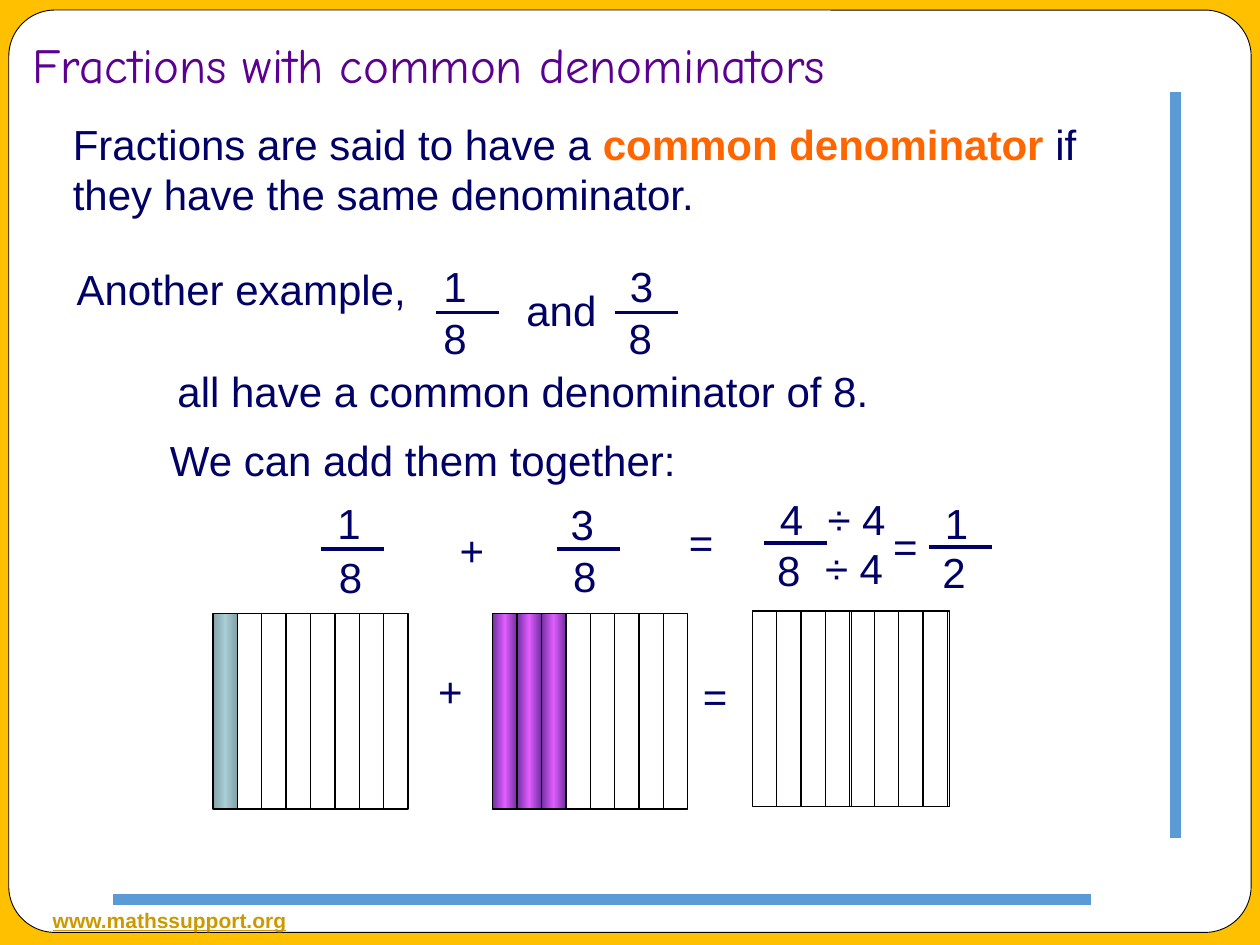
from copy import deepcopy
from dataclasses import dataclass

from lxml.etree import SubElement
from pptx import Presentation
from pptx.dml.color import RGBColor
from pptx.enum.shapes import MSO_CONNECTOR, MSO_SHAPE
from pptx.enum.text import MSO_ANCHOR, MSO_AUTO_SIZE
from pptx.oxml.ns import qn
from pptx.util import Inches, Pt


@dataclass(frozen=True)
class Theme:
    frame: str = "FFC000"
    paper: str = "FFFFFF"
    outline: str = "000000"
    rule: str = "5B9BD5"
    title: str = "5B0091"
    ink: str = "010066"
    accent: str = "FF6600"
    link: str = "CC9900"
    teal: tuple = ("83A0A6", "A8CED6")
    purple: tuple = ("7030A0", "E05DFF")
    font: str = "Arial"
    title_font: str = "Comic Neue"
    title_size: int = 28
    body_size: int = 24
    link_size: int = 12


THEME = Theme()
PARTS = 8          # equal strips in each fraction square
SQUARE = 1.55      # side of a fraction square
DIGIT = (0.39, 0.51)


# Basic parts
def add_text(slide, box, runs, wrap=False, grow=True, anchor=MSO_ANCHOR.TOP):
    """Write one paragraph; runs is a string or a list of (text, format)."""
    frame = slide.shapes.add_textbox(*map(Inches, box)).text_frame
    layout = {
        "word_wrap": wrap,
        "auto_size": MSO_AUTO_SIZE.SHAPE_TO_FIT_TEXT if grow else MSO_AUTO_SIZE.NONE,
        "vertical_anchor": anchor,
    }
    for name, value in layout.items():
        setattr(frame, name, value)
    for words, changes in [(runs, {})] if isinstance(runs, str) else runs:
        run = frame.paragraphs[0].add_run()
        run.text = words
        style = {"name": THEME.font, "size": THEME.body_size, "color": THEME.ink,
                 "bold": False} | changes
        run.font.color.rgb = RGBColor.from_string(style.pop("color"))
        style["size"] = Pt(style["size"])
        for name, value in style.items():
            setattr(run.font, name, value)
    return frame


def add_line(slide, start, end, color, width):
    line = slide.shapes.add_connector(
        MSO_CONNECTOR.STRAIGHT, *map(Inches, (*start, *end)))
    line.line.color.rgb = RGBColor.from_string(color)
    line.line.width = Pt(width)
    SubElement(line._element.spPr, qn("a:effectLst"))


def add_block(slide, box, fill=None, line_width=0.75, kind=MSO_SHAPE.RECTANGLE):
    """Draw a block; fill is None, a colour or an (edge, middle) pair."""
    block = slide.shapes.add_shape(kind, *map(Inches, box))
    block.shadow.inherit = False
    if fill is None:
        block.fill.background()
    elif isinstance(fill, tuple):
        shade_across(block.fill, *fill)
    else:
        block.fill.solid()
        block.fill.fore_color.rgb = RGBColor.from_string(fill)
    if line_width:
        block.line.color.rgb = RGBColor.from_string(THEME.outline)
        block.line.width = Pt(line_width)
    else:
        block.line.fill.background()
    return block


def shade_across(fill, edge, middle):
    fill.gradient()
    fill.gradient_angle = 0
    stop_list = fill._xPr.find(qn("a:gradFill")).find(qn("a:gsLst"))
    stop_list.append(deepcopy(stop_list[-1]))
    for stop, color, place in zip(fill.gradient_stops, (edge, middle, edge), (0, 0.5, 1)):
        stop.color.rgb = RGBColor.from_string(color)
        stop.position = place


# Fractions and their squares
def add_fraction(slide, left, bar_y, top_digit, bottom_digit, top_shift, bottom_shift):
    """Stack two digits round a bar; shifts are offsets from the bar's left end."""
    for digit, (dx, dy) in ((top_digit, top_shift), (bottom_digit, bottom_shift)):
        add_text(slide, (left + dx, bar_y + dy, *DIGIT), digit)
    add_line(slide, (left, bar_y), (left + 0.5, bar_y), THEME.ink, 2.25)


def add_square(slide, left, top, shaded=0, shade=None):
    strip = SQUARE / PARTS
    for index in range(PARTS):
        add_block(slide, (left + index * strip, top, strip, SQUARE),
                  shade if index < shaded else None)


# Regions
def build_frame(slide, left, top, width, height):
    add_block(slide, (left, top, width, height), THEME.frame, line_width=0)
    card = add_block(slide, (left + 0.07, top + 0.08, width - 0.14, height - 0.18),
                     THEME.paper, 0.5, MSO_SHAPE.ROUNDED_RECTANGLE)
    card.adjustments[0] = 0.05
    add_text(slide, (left + 0.32, top + 7.15, 2.09, 0.3), [
        ("www.mathssupport.org", {"size": THEME.link_size, "color": THEME.link,
                                  "bold": True, "underline": True})])
    add_line(slide, (left + 8.66, top + 7.14), (left + 0.9, top + 7.14), THEME.rule, 6.5)
    add_line(slide, (left + 9.33, top + 0.73), (left + 9.33, top + 6.65), THEME.rule, 6.5)


def build_title(slide, left, top, width, height):
    frame = add_text(slide, (left, top, width, height), [
        ("Fractions with common denominators",
         {"name": THEME.title_font, "size": THEME.title_size, "color": THEME.title})],
        wrap=True, grow=False, anchor=MSO_ANCHOR.BOTTOM)
    frame.margin_bottom = Inches(0.1)


def build_definition(slide, left, top, width):
    add_text(slide, (left, top, width, 0.9), [
        ("Fractions are said to have a ", {}),
        ("common denominator", {"color": THEME.accent, "bold": True}),
        (" if they have the same denominator.", {})], wrap=True)


def build_example(slide, left, top):
    add_text(slide, (left, top + 0.02, 2.93, 0.5), "Another example,")
    add_fraction(slide, left + 2.95, top + 0.46, "1", "8", (-0.04, -0.46), (-0.04, -0.05))
    add_text(slide, (left + 3.57, top + 0.19, 0.76, 0.5), "and")
    add_fraction(slide, left + 4.37, top + 0.46, "3", "8", (0.02, -0.46), (0.01, -0.05))
    add_text(slide, (left + 0.8, top + 0.83, 5.88, 0.5),
             "all have a common denominator of 8.")
    add_text(slide, (left + 0.74, top + 1.38, 4.22, 0.5), "We can add them together:")


def build_sum(slide, left, top):
    fractions = (
        (0, 0.49, "1", "8", (0.03, -0.46), (0.04, -0.03)),
        (1.87, 0.49, "3", "8", (0.01, -0.45), (0.03, -0.04)),
        (3.51, 0.44, "4", "8", (0.03, -0.44), (0.01, -0.04)),
        (4.82, 0.47, "1", "2", (0.03, -0.44), (0.01, -0.05)),
    )
    for dx, dy, *digits in fractions:
        add_fraction(slide, left + dx, top + dy, *digits)
    for sign, dx, dy in (("+", 1, 0.24), ("=", 2.82, 0.18), ("=", 4.44, 0.21)):
        add_text(slide, (left + dx, top + dy, 0.4, 0.5), sign)
    for dx, dy in ((3.92, 0), (3.9, 0.39)):
        add_text(slide, (left + dx, top + dy, 0.67, 0.5), "÷ 4")


def build_squares(slide, left, top):
    add_square(slide, left, top + 0.02, 1, THEME.teal)
    add_square(slide, left + 2.22, top + 0.02, 3, THEME.purple)
    add_square(slide, left + 4.28, top)
    # Outline of the empty half of the answer
    add_block(slide, (left + 5.07, top, SQUARE / 2, SQUARE))
    for sign, dx, dy in (("+", 1.69, 0.38), ("=", 3.79, 0.42)):
        add_text(slide, (left + dx, top + dy, 0.4, 0.5), sign)


def main():
    deck = Presentation()
    deck.slide_width, deck.slide_height = Inches(10), Inches(7.5)
    slide = deck.slides.add_slide(deck.slide_layouts[6])
    build_frame(slide, 0, 0, 10, 7.5)
    build_title(slide, 0.16, 0.2, 8.17, 0.64)
    build_definition(slide, 0.48, 0.89, 8.77)
    build_example(slide, 0.51, 2.02)
    build_sum(slide, 2.55, 3.87)
    build_squares(slide, 1.69, 4.85)
    deck.save("out.pptx")


if __name__ == "__main__":
    main()
